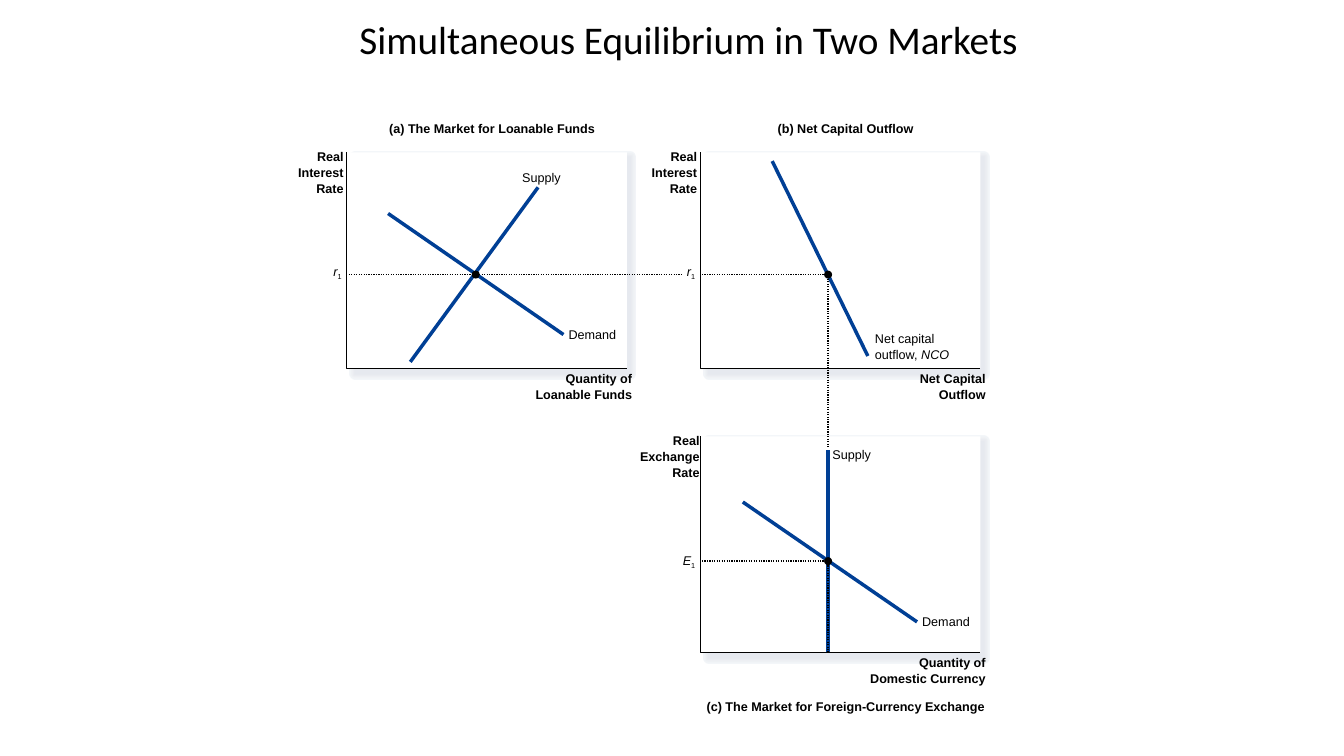
from dataclasses import dataclass

from lxml.etree import SubElement
from pptx import Presentation
from pptx.dml.color import RGBColor
from pptx.enum.dml import MSO_LINE
from pptx.enum.shapes import MSO_CONNECTOR as Connector, MSO_SHAPE as Shape
from pptx.enum.text import MSO_ANCHOR as Anchor, PP_ALIGN as Align
from pptx.oxml.ns import qn
from pptx.util import Cm, Pt


@dataclass(frozen=True)
class Theme:
    title_font: str = "Calibri"
    label_font: str = "Arial"
    title_size: float = 28
    label_size: float = 9
    label_pitch: float = 11.3
    ink: str = "000000"
    paper: str = "FFFFFF"
    curve: str = "003F95"
    thin: float = 0.88
    thick: float = 2.5
    # Soft panel shadow: (colour, outline width), widest first
    shadow: tuple = (
        ("F3F6F9", 9), ("F2F4F8", 8.13), ("F1F4F7", 7.38), ("F0F2F5", 6.5),
        ("EEF1F4", 5.75), ("EDEFF3", 4.88), ("EBEEF2", 4.13), ("EAECF1", 3.25),
        ("E9EBF0", 2.5), ("E7EAEF", 1.63), ("E6E9EF", 0.88),
    )


@dataclass(frozen=True)
class Market:
    left: float
    top: float
    caption: str
    caption_top: float
    y_title: tuple
    y_gap: float
    x_title: tuple
    level: str
    level_top: float


THEME = Theme()
PANEL_WIDTH, PANEL_HEIGHT = 7.06, 5.44
LEFT_COLUMN, RIGHT_COLUMN = 8.74, 17.65
UPPER_ROW, LOWER_ROW = 3.84, 11.0

INTEREST_RATE = ("Real", "Interest", "Rate")
MARKETS = (
    Market(LEFT_COLUMN, UPPER_ROW, "(a) The Market for Loanable Funds", 3.02,
           INTEREST_RATE, 0.08, ("Quantity of", "Loanable Funds"), "r", 6.68),
    Market(RIGHT_COLUMN, UPPER_ROW, "(b) Net Capital Outflow", 3.02,
           INTEREST_RATE, 0.08, ("Net Capital", "Outflow"), "r", 6.68),
    Market(RIGHT_COLUMN, LOWER_ROW, "(c) The Market for Foreign-Currency Exchange", 17.6,
           ("Real", "Exchange", "Rate"), 0.02, ("Quantity of", "Domestic Currency"),
           "E", 13.97),
)

# Where the markets clear
FUNDS_X, OUTFLOW_X = 11.99, 20.87
INTEREST_Y, EXCHANGE_Y = 6.92, 14.14

# Start, end, label position, label lines of (text, style) runs
CURVES = (
    ((21.87, 8.97), (19.46, 4.06), (22.05, 8.33),
     [[("Net capital", "")], [("outflow, ", ""), ("NCO", "italic")]]),
    ((OUTFLOW_X, 16.43), (OUTFLOW_X, 11.33), (20.98, 11.25), [[("Supply", "")]]),
    ((10.34, 9.12), (13.56, 4.72), (13.16, 4.26), [[("Supply", "")]]),
    ((14.2, 8.43), (9.78, 5.38), (14.33, 8.23), [[("Demand", "")]]),
    ((23.11, 15.67), (18.72, 12.65), (23.24, 15.46), [[("Demand", "")]]),
)


def rgb(colour):
    return RGBColor.from_string(colour)


def style_line(line, colour, width, dotted=False):
    line.color.rgb = rgb(colour)
    line.width = Pt(width)
    if dotted:
        line.dash_style = MSO_LINE.ROUND_DOT


def add_text(slide, box, lines, size, font, align, anchor=Anchor.TOP, spacing=None):
    """Add lines of (text, style) runs to a box given in centimetres."""
    frame = slide.shapes.add_textbox(*map(Cm, box)).text_frame
    frame.margin_left = frame.margin_right = frame.margin_top = frame.margin_bottom = 0
    frame.word_wrap = True
    frame.vertical_anchor = anchor
    for index, runs in enumerate(lines):
        paragraph = frame.add_paragraph() if index else frame.paragraphs[0]
        paragraph.alignment = align
        paragraph.line_spacing = spacing
        for text, style in runs:
            run = paragraph.add_run()
            run.text = text
            run.font.name = font
            run.font.size = Pt(size)
            run.font.color.rgb = rgb(THEME.ink)
            run.font.bold = style == "bold"
            run.font.italic = style == "italic"
            if style == "subscript":
                run.font._element.set("baseline", "-25000")


def add_label(slide, x, top, lines, align=Align.LEFT, width=3.2):
    """Place a label whose left, centre or right is at x."""
    shift = {Align.LEFT: 0, Align.CENTER: width / 2, Align.RIGHT: width}[align]
    add_text(slide, (x - shift, top, width, 0.4 * len(lines)), lines, THEME.label_size,
             THEME.label_font, align, spacing=Pt(THEME.label_pitch))


def add_filled(slide, kind, box, fill, outline=None):
    shape = slide.shapes.add_shape(kind, *map(Cm, box))
    shape.shadow.inherit = False
    shape.fill.solid()
    shape.fill.fore_color.rgb = rgb(fill)
    if outline:
        style_line(shape.line, fill, outline)
    else:
        shape.line.fill.background()


def add_path(slide, points, dotted=False):
    start, *rest = [(Cm(x), Cm(y)) for x, y in points]
    builder = slide.shapes.build_freeform(*start)
    builder.add_line_segments(rest, close=False)
    shape = builder.convert_to_shape()
    shape.shadow.inherit = False
    shape.fill.background()
    style_line(shape.line, THEME.ink, THEME.thin, dotted)


def add_segment(slide, start, end, colour, width, dotted=False):
    line = slide.shapes.add_connector(Connector.STRAIGHT, *map(Cm, (*start, *end)))
    style_line(line.line, colour, width, dotted)
    SubElement(line._element.spPr, qn("a:effectLst"))


def add_dot(slide, x, y, diameter=0.2):
    add_filled(slide, Shape.OVAL, (x - diameter / 2, y - diameter / 2, diameter, diameter),
               THEME.ink)


def add_panel(slide, market):
    left, top = market.left, market.top
    right, bottom = left + PANEL_WIDTH, top + PANEL_HEIGHT
    for colour, width in THEME.shadow:
        add_filled(slide, Shape.RECTANGLE,
                   (left + 0.22, top + 0.13, PANEL_WIDTH - 0.14, PANEL_HEIGHT), colour, width)
    add_filled(slide, Shape.RECTANGLE, (left, top, PANEL_WIDTH, PANEL_HEIGHT), THEME.paper)
    add_path(slide, [(left, top), (left, bottom), (right, bottom)])


def add_market_labels(slide, market):
    left, top = market.left, market.top
    right, bottom = left + PANEL_WIDTH, top + PANEL_HEIGHT
    add_label(slide, (left + right) / 2 + 0.13, market.caption_top,
              [[(market.caption, "bold")]], Align.CENTER, 8)
    add_label(slide, left - market.y_gap, top - 0.1,
              [[(text, "bold")] for text in market.y_title], Align.RIGHT)
    add_label(slide, right + 0.13, bottom + 0.05,
              [[(text, "bold")] for text in market.x_title], Align.RIGHT)
    add_label(slide, left - 0.13, market.level_top,
              [[(market.level, "italic"), ("1", "subscript")]], Align.RIGHT, 0.6)


def main():
    presentation = Presentation()
    presentation.slide_width, presentation.slide_height = Cm(33.87), Cm(19.05)
    slide = presentation.slides.add_slide(presentation.slide_layouts[6])

    # Title
    add_text(slide, (5.92, 0.15, 22.86, 1.9),
             [[("Simultaneous Equilibrium in Two Markets", "")]],
             THEME.title_size, THEME.title_font, Align.CENTER, Anchor.MIDDLE, 0.8)

    # Panels first, so that no shadow covers a label
    for market in MARKETS:
        add_panel(slide, market)
    for market in MARKETS:
        add_market_labels(slide, market)

    # Curves
    for start, end, (label_x, label_top), lines in CURVES:
        add_segment(slide, start, end, THEME.curve, THEME.thick)
        add_label(slide, label_x, label_top, lines)

    # Guides from the interest rate to the exchange rate
    guide_left = RIGHT_COLUMN + 0.04
    add_segment(slide, (LEFT_COLUMN + 0.05, INTEREST_Y), (17.2, INTEREST_Y),
                THEME.ink, THEME.thin, dotted=True)
    for level, foot in ((INTEREST_Y, 11.25), (EXCHANGE_Y, 16.45)):
        add_path(slide, [(guide_left, level), (OUTFLOW_X, level), (OUTFLOW_X, foot)],
                 dotted=True)

    # Equilibrium points
    for x, y in ((FUNDS_X, INTEREST_Y), (OUTFLOW_X, INTEREST_Y), (OUTFLOW_X, EXCHANGE_Y)):
        add_dot(slide, x, y)

    presentation.save("out.pptx")


if __name__ == "__main__":
    main()
